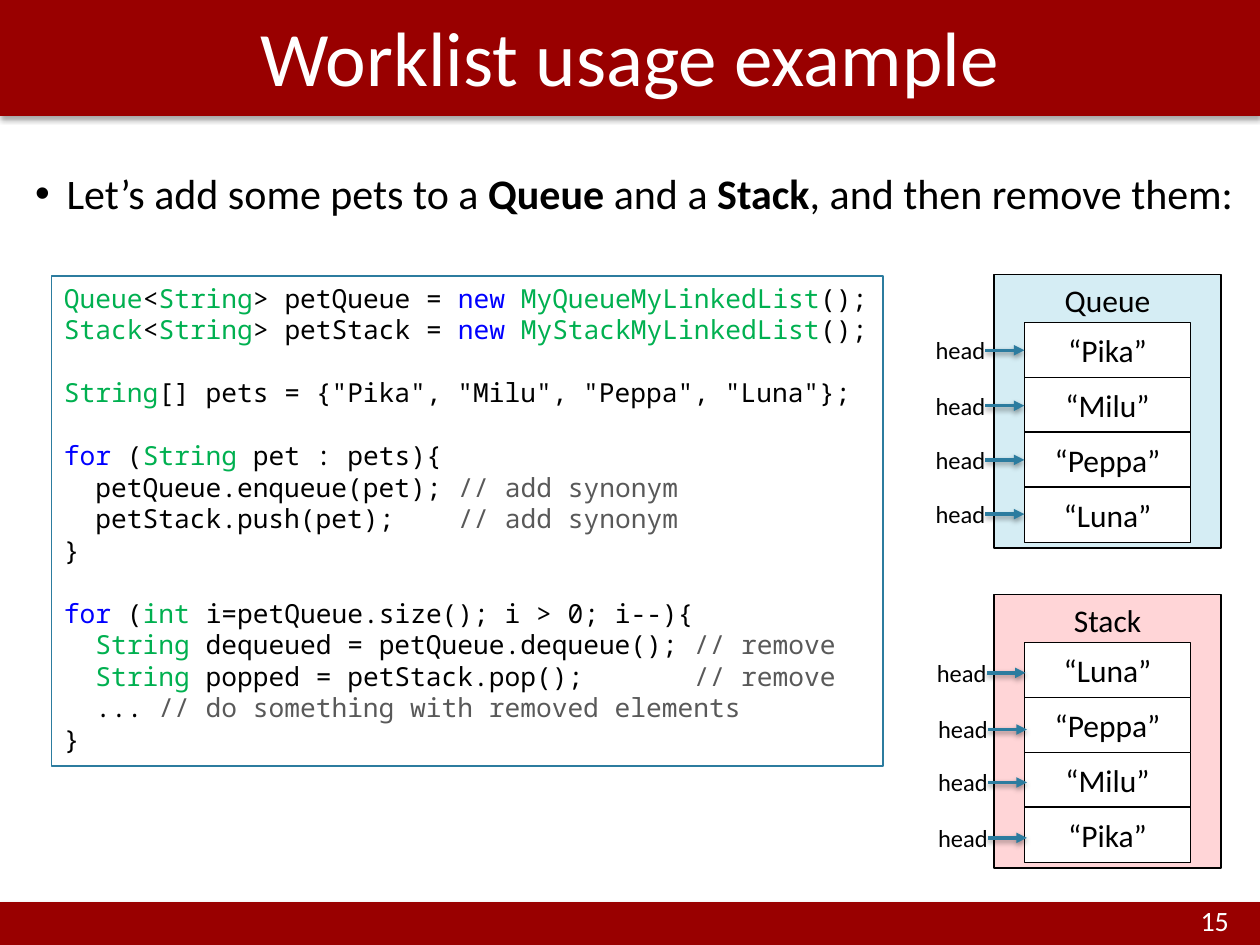
from lxml.etree import SubElement
from pptx import Presentation
from pptx.dml.color import RGBColor
from pptx.enum.shapes import MSO_CONNECTOR, MSO_SHAPE
from pptx.enum.text import MSO_ANCHOR, PP_ALIGN
from pptx.oxml.ns import qn
from pptx.util import Inches, Pt

RED, BLUE, BLACK, WHITE = "990000", "2C7C9F", "000000", "FFFFFF"
TYPE, KEYWORD, COMMENT = "00B050", "0000FF", "595959"

CODE = [
    [("Queue", TYPE), ("<", BLACK), ("String", TYPE), ("> petQueue = ", BLACK),
     ("new ", KEYWORD), ("MyQueueMyLinkedList", TYPE), ("();", BLACK)],
    [("Stack", TYPE), ("<", BLACK), ("String", TYPE), ("> petStack = ", BLACK),
     ("new ", KEYWORD), ("MyStackMyLinkedList", TYPE), ("();", BLACK)],
    [],
    [("String", TYPE), ('[] pets = {"Pika", "Milu", "Peppa", "Luna"};', BLACK)],
    [],
    [("for", KEYWORD), (" (", BLACK), ("String", TYPE), (" pet : pets){", BLACK)],
    [("  petQueue.enqueue(pet); ", BLACK), ("// add synonym", COMMENT)],
    [("  petStack.push(pet);    ", BLACK), ("// add synonym", COMMENT)],
    [("}", BLACK)],
    [],
    [("for", KEYWORD), (" (", BLACK), ("int ", TYPE),
     ("i=petQueue.size(); i > 0; i--){", BLACK)],
    [("  ", BLACK), ("String", TYPE), (" dequeued = petQueue.dequeue(); ", BLACK),
     ("// remove", COMMENT)],
    [("  ", BLACK), ("String", TYPE), (" popped = petStack.pop();       ", BLACK),
     ("// remove", COMMENT)],
    [("  ... ", BLACK), ("// do something with removed elements", COMMENT)],
    [("}", BLACK)],
]


def color(value):
    return RGBColor.from_string(value)


class SlideBuilder:
    font = "Calibri"
    code_font = "Noto Sans Mono"

    def __init__(self, slide):
        self.slide = slide

    def run(self, paragraph, text, size, fill=BLACK, bold=False, font=None):
        run = paragraph.add_run()
        run.text = text
        run.font.name = font or self.font
        run.font.size = Pt(size)
        run.font.bold = bold
        run.font.color.rgb = color(fill)

    def shadow(self, properties, opacity, distance):
        effects = properties.find(qn("a:effectLst"))
        if effects is None:
            effects = SubElement(properties, qn("a:effectLst"))
        outer = SubElement(effects, qn("a:outerShdw"), blurRad=str(Pt(3.1)),
                           dist=str(Pt(distance)), dir="5400000", rotWithShape="0")
        black = SubElement(outer, qn("a:srgbClr"), val=BLACK)
        SubElement(black, qn("a:alpha"), val=str(opacity * 1000))

    def box(self, left, top, width, height, fill=None, line=None):
        shape = self.slide.shapes.add_shape(
            MSO_SHAPE.RECTANGLE, Inches(left), Inches(top), Inches(width), Inches(height))
        shape.shadow.inherit = False
        if fill:
            shape.fill.solid()
            shape.fill.fore_color.rgb = color(fill)
        else:
            shape.fill.background()
        if line:
            shape.line.color.rgb = color(line)
            shape.line.width = Pt(0.75)
        else:
            shape.line.fill.background()
        return shape

    def band(self, top, height):
        shape = self.box(0, top, 10, height, RED)
        self.shadow(shape._element.spPr, 35, 1.8)

    def labelled_box(self, text, left, top, width, height, fill, anchor):
        frame = self.box(left, top, width, height, fill, BLACK).text_frame
        frame.vertical_anchor = anchor
        paragraph = frame.paragraphs[0]
        paragraph.alignment = PP_ALIGN.CENTER
        self.run(paragraph, text, 18)

    def text(self, runs, left, top, width, height, size, fill=BLACK,
             align=PP_ALIGN.LEFT, anchor=MSO_ANCHOR.TOP):
        frame = self.slide.shapes.add_textbox(
            Inches(left), Inches(top), Inches(width), Inches(height)).text_frame
        frame.word_wrap = True
        frame.vertical_anchor = anchor
        paragraph = frame.paragraphs[0]
        paragraph.alignment = align
        for text, bold in runs:
            self.run(paragraph, text, size, fill, bold)
        return frame

    def bullet(self, runs, left, top, width, height, size):
        paragraph = self.text(runs, left, top, width, height, size).paragraphs[0]
        paragraph.space_before = Pt(size * 0.2)
        properties = paragraph._p.get_or_add_pPr()
        properties.set("marL", str(Inches(0.25)))
        properties.set("indent", str(-Inches(0.25)))
        SubElement(properties, qn("a:buFont"), typeface="Arial")
        SubElement(properties, qn("a:buChar"), char="•")

    def code(self, lines, left, top, width, height):
        frame = self.box(left, top, width, height, line=BLUE).text_frame
        frame.word_wrap = True
        frame.vertical_anchor = MSO_ANCHOR.TOP
        for index, line in enumerate(lines):
            paragraph = frame.add_paragraph() if index else frame.paragraphs[0]
            paragraph.alignment = PP_ALIGN.LEFT
            paragraph.font.size = Pt(15)
            paragraph.font.name = self.code_font
            for text, fill in line:
                self.run(paragraph, text, 15, fill, font=self.code_font)

    def head(self, tip, middle):
        start = tip - 0.31
        frame = self.text([("head", False)], start - 0.51, middle - 0.12, 0.51, 0.24, 14,
                          align=PP_ALIGN.RIGHT)
        frame.margin_left = Inches(0.01)
        frame.margin_right = frame.margin_top = frame.margin_bottom = 0
        arrow = self.slide.shapes.add_connector(
            MSO_CONNECTOR.STRAIGHT, Inches(start), Inches(middle), Inches(tip), Inches(middle))
        arrow.line.color.rgb = color(BLUE)
        arrow.line.width = Pt(2)
        SubElement(arrow.line._get_or_add_ln(), qn("a:tailEnd"), type="triangle")
        self.shadow(arrow._element.spPr, 38, 1.6)

    def worklist(self, name, top, fill, pets, heads):
        self.labelled_box(name, 7.89, top, 1.8, 2.17, fill, MSO_ANCHOR.TOP)
        for index, pet in enumerate(pets):
            self.labelled_box(f"“{pet}”", 8.13, top + 0.38 + index * 0.435, 1.32, 0.44,
                              WHITE, MSO_ANCHOR.MIDDLE)
        for tip, middle in heads:
            self.head(tip, middle)


def main():
    presentation = Presentation()
    presentation.slide_width = Inches(10)
    presentation.slide_height = Inches(7.5)
    builder = SlideBuilder(presentation.slides.add_slide(presentation.slide_layouts[6]))

    builder.band(7.16, 0.34)
    builder.band(-0.01, 0.93)
    builder.text([("15", False)], 9.43, 7.12, 0.49, 0.37, 16, WHITE)
    builder.text([("Worklist usage example", False)], 0, -0.18, 10, 1.25, 44, WHITE,
                 PP_ALIGN.CENTER, MSO_ANCHOR.MIDDLE)
    builder.bullet([("Let’s add some pets to a ", False), ("Queue", True),
                    (" and a ", False), ("Stack", True),
                    (", and then remove them:", False)], 0.18, 1.28, 9.75, 1.12, 24)
    builder.code(CODE, 0.41, 2.19, 6.6, 3.89)

    pets = ["Pika", "Milu", "Peppa", "Luna"]
    builder.worklist("Queue", 2.18, "D5EDF4", pets,
                     [(8.13, 2.78), (8.13, 3.22), (8.13, 3.65), (8.13, 4.08)])
    builder.worklist("Stack", 4.72, "FFD5D7", pets[::-1],
                     [(8.14, 5.34), (8.15, 5.79), (8.15, 6.21), (8.15, 6.65)])
    presentation.save("out.pptx")


if __name__ == "__main__":
    main()
